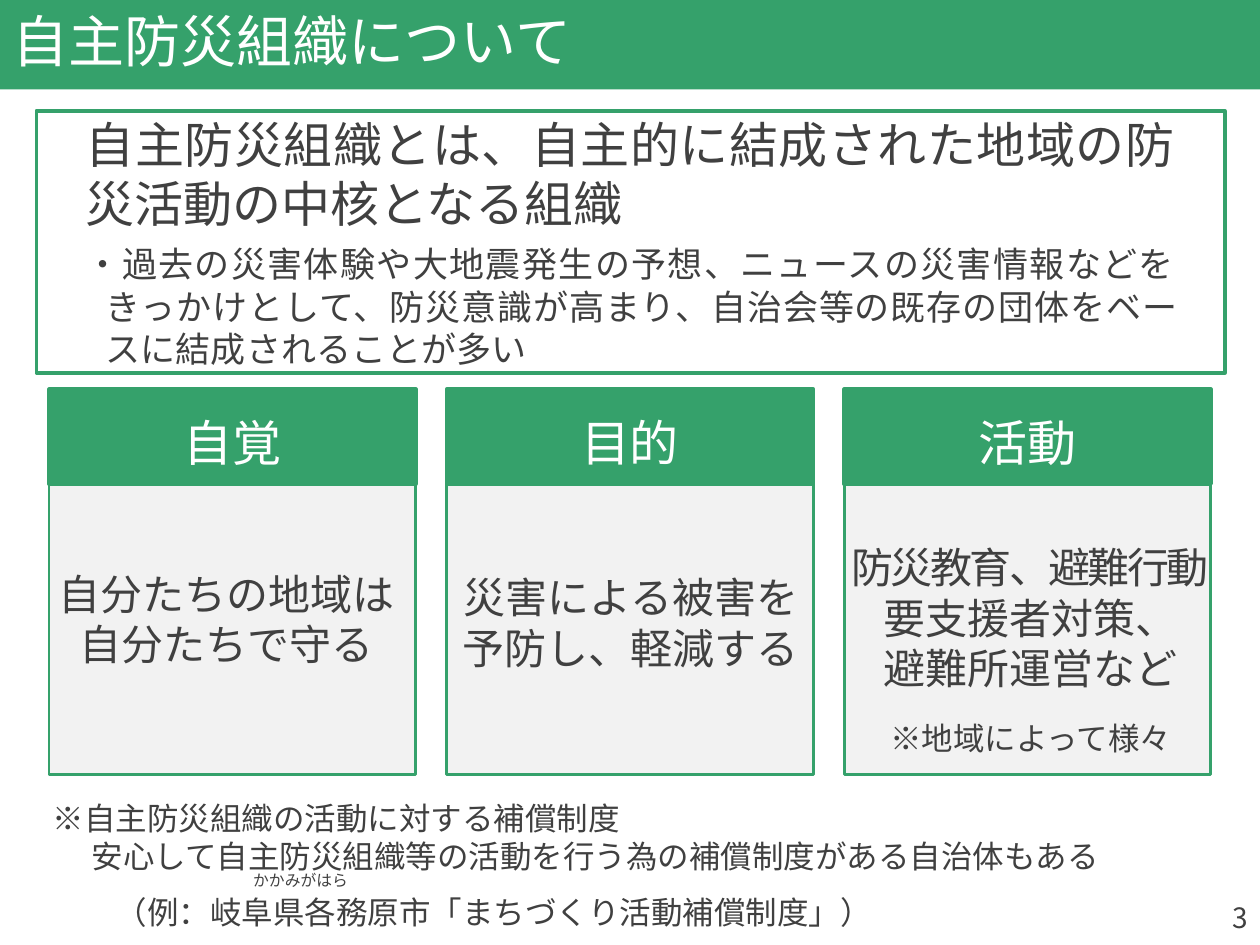
import pptx
import pptx.util
import pptx.dml.color
import pptx.enum.shapes
import pptx.enum.text
import pptx.oxml.ns
import lxml.etree

Inches = pptx.util.Inches
Pt = pptx.util.Pt
ALIGN = pptx.enum.text.PP_ALIGN
MIDDLE = pptx.enum.text.MSO_ANCHOR.MIDDLE
SHAPE = pptx.enum.shapes.MSO_SHAPE
FONT = "Noto Sans CJK JP"
COLORS = {name: pptx.dml.color.RGBColor.from_string(value) for name, value in {
    "green": "35A16B", "panel": "F2F2F2", "text": "404040", "white": "FFFFFF"}.items()}


def add_run(paragraph, text, size, color="text", spacing=None):
    run = paragraph.add_run()
    run.text = text
    run.font.size = Pt(size)
    run.font.color.rgb = COLORS[color]
    run.font.name = FONT
    properties = run.font._element
    lxml.etree.SubElement(properties, pptx.oxml.ns.qn("a:ea"), typeface=FONT)
    if spacing is not None:
        properties.set("spc", str(spacing))


def add_box(kind, left, top, width, height, fill=None, line=None):
    place = [Inches(v) for v in (left, top, width, height)]
    if kind is None:
        box = slide.shapes.add_textbox(*place)
    else:
        box = slide.shapes.add_shape(kind, *place)
        box.shadow.inherit = False
        box.line.color.rgb = COLORS["green"]
        box.line.width = Pt(line)
        if kind == SHAPE.ROUNDED_RECTANGLE:
            box.adjustments[0] = 0
            box.text_frame.vertical_anchor = MIDDLE
            box.text_frame.margin_left = box.text_frame.margin_right = Inches(0.39)
        if fill:
            box.fill.solid()
            box.fill.fore_color.rgb = COLORS[fill]
        else:
            box.fill.background()
    box.text_frame.word_wrap = True
    return box.text_frame


deck = pptx.Presentation()
deck.slide_width = Inches(10)
deck.slide_height = Inches(7.5)
slide = deck.slides.add_slide(deck.slide_layouts[5])

title = slide.shapes.title
title.left, title.top, title.width, title.height = Inches(0), Inches(0), Inches(10), Inches(0.71)
title.fill.solid()
title.fill.fore_color.rgb = COLORS["green"]
title.text_frame.auto_size = pptx.enum.text.MSO_AUTO_SIZE.NONE
title.text_frame.vertical_anchor = MIDDLE
heading = title.text_frame.paragraphs[0]
heading.alignment = ALIGN.LEFT
heading.line_spacing = 0.9
add_run(heading, "自主防災組織について", 32, "white")

definition = add_box(SHAPE.ROUNDED_RECTANGLE, 0.29, 0.88, 9.43, 2.08, line=2.25)
meaning = definition.paragraphs[0]
add_run(meaning, "自主防災組織とは、自主的に結成された地域の防災活動の中核となる組織", 28)
background = definition.add_paragraph()
background.space_before = Pt(6)
indent = background._p.get_or_add_pPr()
indent.set("marL", str(Inches(0.16)))
indent.set("indent", str(Inches(-0.16)))
add_run(background, "・過去の災害体験や大地震発生の予想、ニュースの災害情報などを", 20)
background.add_line_break()
add_run(background, "きっかけとして、防災意識が高まり、自治会等の既存の団体をベースに結成されることが多い", 20)
for paragraph in (meaning, background):
    paragraph.alignment = ALIGN.JUSTIFY

pillars = [
    ("自覚", 0.22, 4.46, 0.91, [[("自分たちの地域は", None)], [("自分たちで守る", None)]]),
    ("目的", 3.43, 4.49, 0.97, [[("災害による被害を", None)], [("予防し、軽減する", None)]]),
    ("活動", 6.6, 4.25, 1.31, [[("防災教育、避難行動", -150), ("要支援者対策、", 0)],
                             [("避難所運営など", None)]]),
]
for column, (name, text_left, text_top, text_height, lines) in enumerate(pillars):
    left = 0.39 + column * 3.155
    add_box(SHAPE.RECTANGLE, left, 3.71, 2.91, 2.44, "panel", 1.5)
    body = add_box(None, text_left, text_top, 3.15, text_height)
    for number, runs in enumerate(lines):
        paragraph = body.add_paragraph() if number else body.paragraphs[0]
        paragraph.alignment = ALIGN.CENTER
        for text, spacing in runs:
            add_run(paragraph, text, 24, spacing=spacing)
    header = add_box(SHAPE.ROUNDED_RECTANGLE, left, 3.09, 2.91, 0.75, "green", 2.25)
    header.margin_top = Inches(0.04)
    label = header.paragraphs[0]
    label.alignment = ALIGN.CENTER
    label.line_spacing = Pt(40)
    add_run(label, name, 28, "white")

compensation = add_box(None, 0.32, 6.29, 8.59, 1.23)
for number, (text, margin, spacing) in enumerate([
        ("※自主防災組織の活動に対する補償制度", 0, 1.0),
        ("安心して自主防災組織等の活動を行う為の補償制度がある自治体もある", 0.31, 1.0),
        ("（例：岐阜県各務原市「まちづくり活動補償制度」）", 0.5, 1.5)]):
    paragraph = compensation.add_paragraph() if number else compensation.paragraphs[0]
    paragraph.line_spacing = spacing
    paragraph._p.get_or_add_pPr().set("marL", str(Inches(margin)))
    add_run(paragraph, text, 18)

for text, size, alignment, place in [
        ("※地域によって様々", 18, ALIGN.CENTER, (6.83, 5.66, 2.7, 0.48)),
        ("かかみがはら", 9, ALIGN.CENTER, (0.81, 6.86, 3.15, 0.4)),
        ("3", 16, ALIGN.RIGHT, (7.75, 7.1, 2.25, 0.4))]:
    note = add_box(None, *place).paragraphs[0]
    note.alignment = alignment
    add_run(note, text, size)

deck.save("out.pptx")
